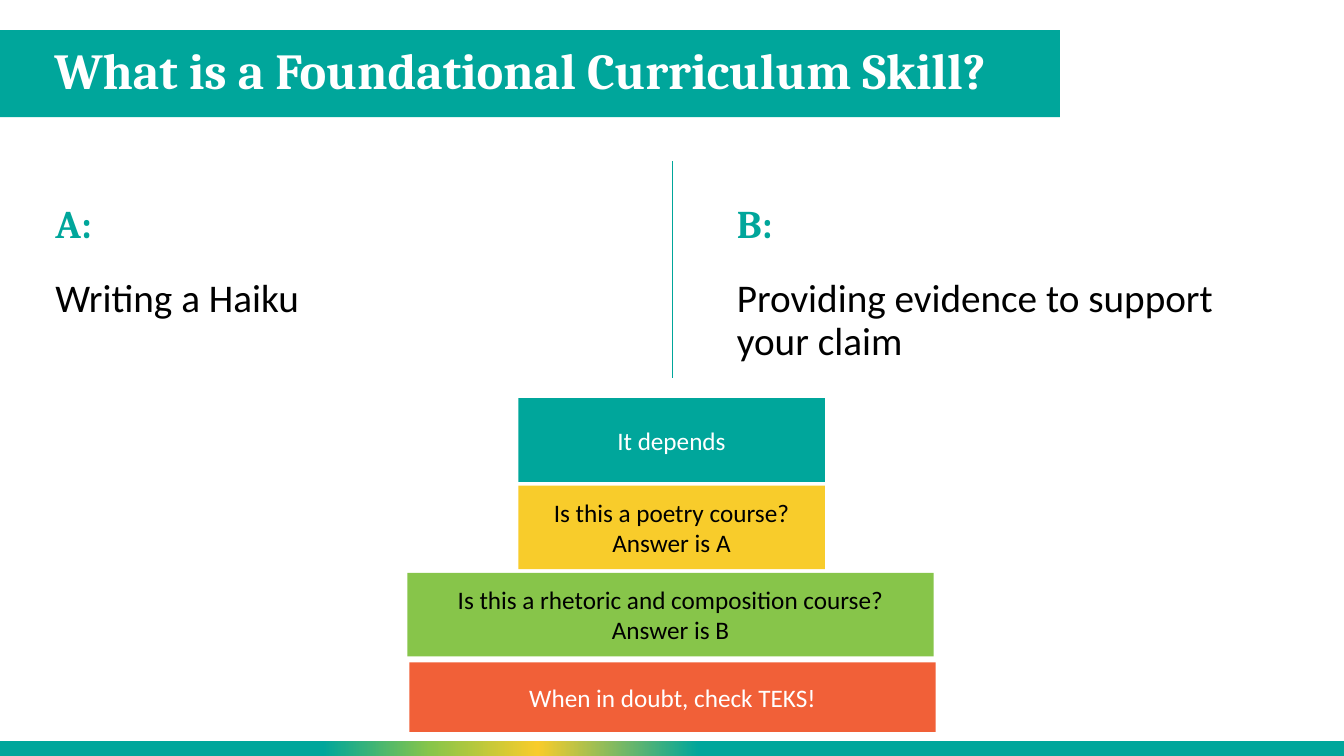
from lxml.etree import SubElement
from pptx import Presentation
from pptx.dml.color import RGBColor
from pptx.enum.shapes import MSO_CONNECTOR as Connector, MSO_SHAPE as Shape
from pptx.enum.text import MSO_ANCHOR as Anchor, PP_ALIGN as Align
from pptx.oxml.ns import qn
from pptx.util import Inches, Pt

COLOURS = {
    "teal": "00A69B",
    "yellow": "F8CC2B",
    "green": "87C54A",
    "orange": "F16038",
    "white": "FFFFFF",
    "black": "000000",
}
FORMATS = {
    "title": {"name": "Cambria", "size": Pt(36), "bold": True},
    "label": {"name": "Cambria", "size": Pt(28), "bold": True},
    "body": {"name": "Calibri", "size": Pt(28), "bold": False},
    "step": {"name": "Calibri", "size": Pt(18), "bold": False},
}
FOOTER_STOPS = [(0, "teal"), (48, "teal"), (60, "yellow"),
                (68, "green"), (76, "teal"), (100, "teal")]


class SlideBuilder:
    """Draws on one slide; all lengths are percent of its width or height."""

    def __init__(self, deck):
        self.deck = deck
        self.page = deck.slides.add_slide(deck.slide_layouts[6])

    def across(self, share):
        return round(self.deck.slide_width * share / 100)

    def down(self, share):
        return round(self.deck.slide_height * share / 100)

    def frame(self, left, top, width, height):
        return (self.across(left), self.down(top),
                self.across(width), self.down(height))

    def fill_text(self, box, lines, style, colour, anchor, align=Align.LEFT, spacing=1.0):
        frame = box.text_frame
        frame.word_wrap = True
        frame.vertical_anchor = anchor
        for index, line in enumerate(lines):
            para = frame.paragraphs[0] if index == 0 else frame.add_paragraph()
            para.alignment = align
            para.line_spacing = spacing
            span = para.add_run()
            span.text = line
            for key, value in FORMATS[style].items():
                setattr(span.font, key, value)
            span.font.color.rgb = RGBColor.from_string(COLOURS[colour])

    def text(self, place, line, style, colour, anchor):
        box = self.page.shapes.add_textbox(*self.frame(*place))
        self.fill_text(box, [line], style, colour, anchor, spacing=0.9)

    def block(self, place, fill, lines=(), colour="white"):
        box = self.page.shapes.add_shape(Shape.RECTANGLE, *self.frame(*place))
        box.shadow.inherit = False
        box.line.fill.background()
        box.fill.solid()
        box.fill.fore_color.rgb = RGBColor.from_string(COLOURS[fill])
        self.fill_text(box, lines, "step", colour, Anchor.MIDDLE, Align.CENTER)
        return box

    def gradient_block(self, place, stops, angle):
        box = self.block(place, stops[0][1])
        box.fill.gradient()
        box.fill.gradient_angle = angle
        stop_list = box._element.spPr.find(".//" + qn("a:gsLst"))
        for old_stop in list(stop_list):
            stop_list.remove(old_stop)
        for position, colour in stops:
            stop = SubElement(stop_list, qn("a:gs"), pos=str(position * 1000))
            SubElement(stop, qn("a:srgbClr"), val=COLOURS[colour])

    def vertical_line(self, left, top, bottom, colour, weight):
        line = self.page.shapes.add_connector(
            Connector.STRAIGHT, self.across(left), self.down(top),
            self.across(left), self.down(bottom))
        line.line.color.rgb = RGBColor.from_string(COLOURS[colour])
        line.line.width = Pt(weight)
        SubElement(line._element.spPr, qn("a:effectLst"))


def main():
    deck = Presentation()
    deck.slide_width, deck.slide_height = Inches(13.33), Inches(7.5)
    slide = SlideBuilder(deck)

    slide.block((0, 4, 78.86, 11.5), "teal")
    slide.gradient_block((0, 98, 100, 2), FOOTER_STOPS, 180)
    slide.vertical_line(50, 21.33, 88.93, "teal", 0.5)
    slide.text((3.3, 3.87, 75.4, 11.6), "What is a Foundational Curriculum Skill?",
               "title", "white", Anchor.MIDDLE)

    for left, label, skill in [
        (3.38, "A:", "Writing a Haiku"),
        (54.09, "B:", "Providing evidence to support your claim"),
    ]:
        slide.text((left, 21.33, 42.5, 12), label, "label", "teal", Anchor.BOTTOM)
        slide.text((left, 36.27, 42.5, 13.73), skill, "body", "black", Anchor.TOP)

    slide.block((30.31, 50, 40.66, 46.67), "white")
    narrow, wide = 22.81, 39.16
    for left, top, width, height, fill, colour, lines in [
        (38.56, 52.67, narrow, 11.07, "teal", "white", ["It depends"]),
        (38.56, 64.22, narrow, 11.07, "yellow", "black",
         ["Is this a poetry course?", "Answer is A"]),
        (30.31, 75.77, wide, 11.07, "green", "black",
         ["Is this a rhetoric and composition course?", "Answer is B"]),
        (30.46, 87.6, wide, 9.2, "orange", "white", ["When in doubt, check TEKS!"]),
    ]:
        slide.block((left, top, width, height), fill, lines, colour)

    deck.save("out.pptx")


if __name__ == "__main__":
    main()
